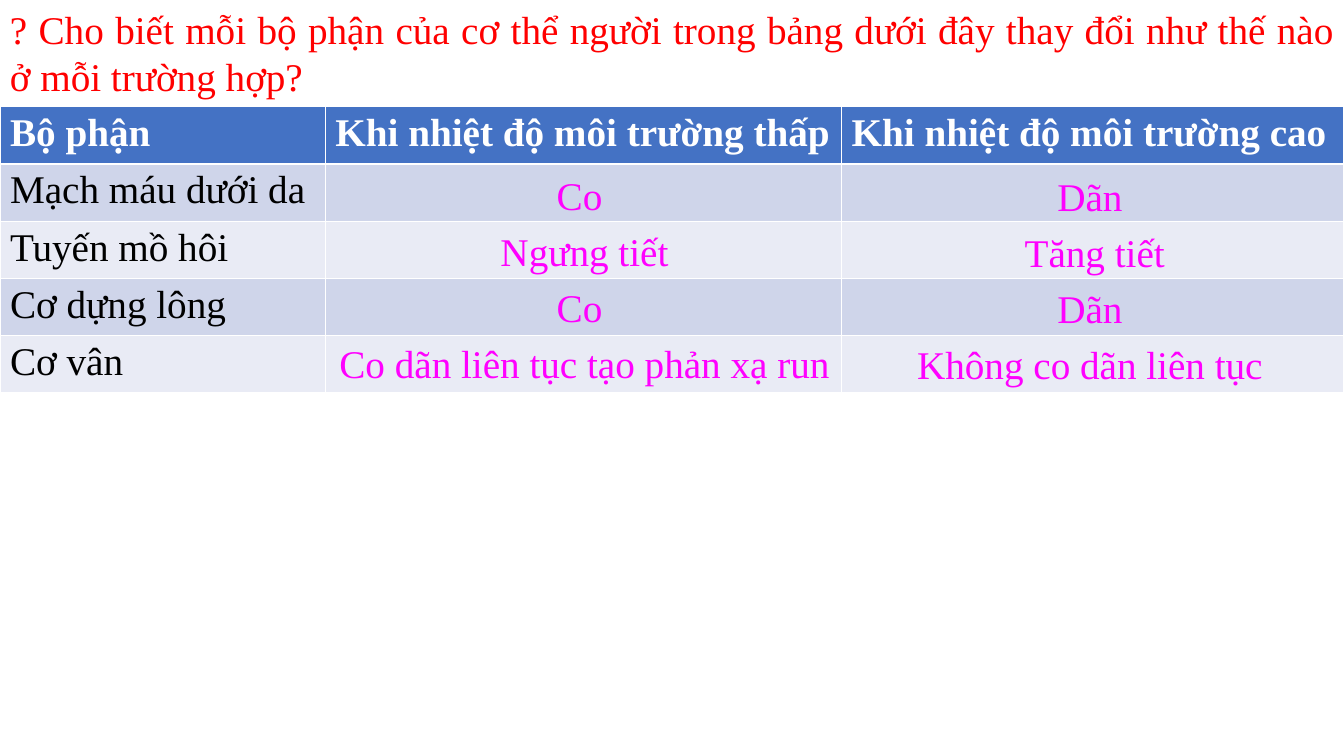
from pptx import Presentation
from pptx.dml.color import RGBColor
from pptx.enum.text import MSO_AUTO_SIZE, PP_ALIGN
from pptx.util import Cm, Pt

CENTER, JUSTIFY = PP_ALIGN.CENTER, PP_ALIGN.JUSTIFY
FIT_SHAPE = MSO_AUTO_SIZE.SHAPE_TO_FIT_TEXT

QUESTION = ("? Cho biết mỗi bộ phận của cơ thể người trong bảng dưới đây "
            "thay đổi như thế nào ở mỗi trường hợp? ")
HEADERS = ["Bộ phận", "Khi nhiệt độ môi trường thấp", "Khi nhiệt độ môi trường cao"]
BODY_PARTS = ["Mạch máu dưới da", "Tuyến mồ hôi", "Cơ dựng lông", "Cơ vân"]
# left, top of the first answer, width (cm), answers from top to bottom
ANSWER_COLUMNS = [
    (8.23, 4.19, 13.0, ["Co ", "Ngưng tiết", "Co ", "Co dãn liên tục tạo phản xạ run "]),
    (21.28, 4.23, 12.62, ["Dãn ", "Tăng tiết", "Dãn ", "Không co dãn liên tục "]),
]

SLIDE_WIDTH, SLIDE_HEIGHT = 33.87, 19.05
TABLE_TOP, ROW_HEIGHT = 2.69, 1.44
COLUMN_WIDTHS = [8.2, 13.01, 12.66]
ANSWER_STEP, ANSWER_HEIGHT = 1.41, 1.45
HEADER_FILL, BAND_FILLS = "4472C4", ["CFD5EA", "E9EBF5"]
FONT = {"name": "Times New Roman", "size": Pt(28)}


def color(hex_value):
    return RGBColor.from_string(hex_value)


def write(frame, text, text_color, alignment=None, bold=False):
    paragraph = frame.paragraphs[0]
    paragraph.alignment = alignment
    run = paragraph.add_run()
    run.text = text
    for attribute, value in {**FONT, "bold": bold}.items():
        setattr(run.font, attribute, value)
    run.font.color.rgb = color(text_color)


def add_text(slide, box, text, text_color, alignment):
    frame = slide.shapes.add_textbox(*map(Cm, box)).text_frame
    frame.word_wrap = True
    frame.auto_size = FIT_SHAPE
    write(frame, text, text_color, alignment)


def add_body_table(slide):
    row_count = len(BODY_PARTS) + 1
    table = slide.shapes.add_table(
        row_count, len(HEADERS), Cm(0), Cm(TABLE_TOP),
        Cm(SLIDE_WIDTH), Cm(ROW_HEIGHT * row_count)).table
    for column, width in zip(table.columns, COLUMN_WIDTHS):
        column.width = Cm(width)
    for index, row in enumerate(table.rows):
        row.height = Cm(ROW_HEIGHT)
        for cell in row.cells:
            cell.fill.solid()
            cell.fill.fore_color.rgb = color(
                BAND_FILLS[(index - 1) % 2] if index else HEADER_FILL)
    for cell, header in zip(table.rows[0].cells, HEADERS):
        write(cell.text_frame, header, "FFFFFF", bold=True)
    for index, body_part in enumerate(BODY_PARTS, 1):
        write(table.cell(index, 0).text_frame, body_part, "000000")


def main():
    presentation = Presentation()
    presentation.slide_width, presentation.slide_height = Cm(SLIDE_WIDTH), Cm(SLIDE_HEIGHT)
    slide = presentation.slides.add_slide(presentation.slide_layouts[6])
    add_text(slide, (0, 0, SLIDE_WIDTH, 2.64), QUESTION, "FF0000", JUSTIFY)
    add_body_table(slide)
    for left, top, width, answers in ANSWER_COLUMNS:
        for index, answer in enumerate(answers):
            box = (left, top + index * ANSWER_STEP, width, ANSWER_HEIGHT)
            add_text(slide, box, answer, "FF00FF", CENTER)
    presentation.save("out.pptx")


if __name__ == "__main__":
    main()
